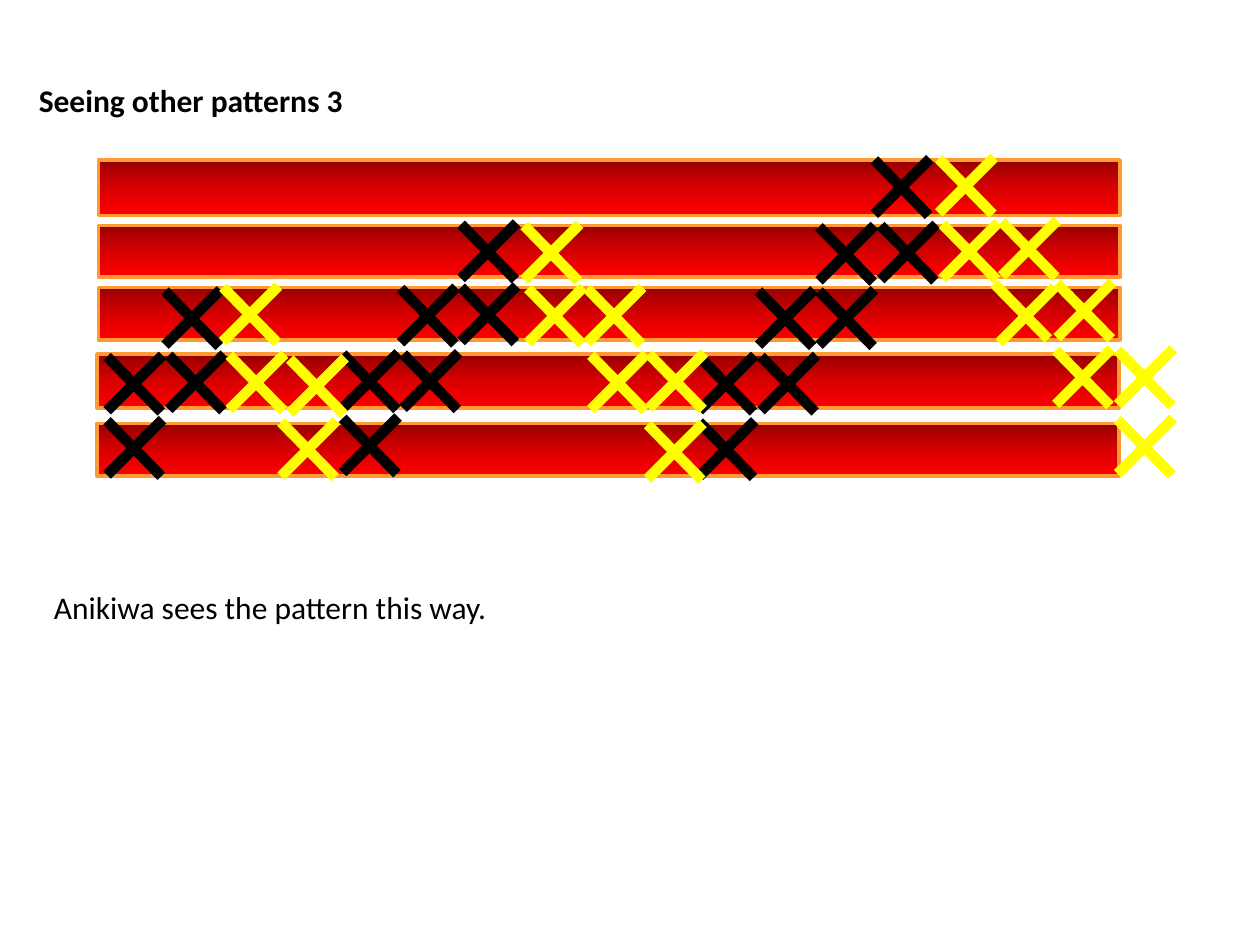
"""Build the slide of red bars marked with black and yellow crosses."""
import copy

import pptx
import pptx.dml.color
import pptx.enum.shapes
import pptx.oxml.ns
import pptx.util

PX = 9144
SHAPES = pptx.enum.shapes.MSO_SHAPE
LINE = pptx.enum.shapes.MSO_CONNECTOR.STRAIGHT
qn = pptx.oxml.ns.qn

bars = [(78, 127, 44), (78, 179, 41), (78, 228, 42), (77, 281, 43), (77, 336, 42)]
stops = [(0, "970000"), (0.5, "D70000"), (1, "FF0000")]
black = [
    (85, 334), (134, 282), (85, 283), (131, 231), (272, 332), (366, 178),
    (272, 281), (320, 281), (318, 229), (366, 228), (555, 335), (650, 180),
    (555, 283), (604, 283), (602, 231), (650, 231), (699, 179), (694, 127),
]
yellow = [
    (223, 335), (182, 282), (230, 285), (177, 228), (466, 229), (416, 179),
    (514, 337), (469, 282), (515, 281), (419, 229), (839, 225), (887, 333),
    (838, 278), (887, 278), (795, 176), (789, 225, 4), (748, 178), (745, 126),
]
texts = [
    ("Anikiwa sees the pattern this way.", (33, 462, 945, 40), False),
    ("Seeing other patterns 3", (21, 59, 486, 40), True),
]


def rgb(code):
    return pptx.dml.color.RGBColor.from_string(code)


def cross(shapes, tone, x, y, slip=0):
    strokes = [
        (x, y, x + 43, y + 44),
        (x + 44 + slip, y - 1 + slip, x + slip, y + 43 + slip),
    ]
    for ends in strokes:
        line = shapes.add_connector(LINE, *[n * PX for n in ends])
        line.line.color.rgb = rgb(tone)
        line.line.width = pptx.util.Pt(6)
        props = line._element.spPr
        props.append(props.makeelement(qn("a:effectLst"), {}))


deck = pptx.Presentation()
deck.slide_width = 1000 * PX
deck.slide_height = 750 * PX
slide = deck.slides.add_slide(deck.slide_layouts[6])
group = slide.shapes.add_group_shape()

for x, y, high in bars:
    bar = group.shapes.add_shape(SHAPES.RECTANGLE, x * PX, y * PX, 811 * PX, high * PX)
    bar.shadow.inherit = False
    bar.line.color.rgb = rgb("FF9933")
    bar.line.width = pptx.util.Pt(2)
    bar.fill.gradient()
    bar.fill.gradient_angle = 270
    ramp = bar._element.spPr.find(".//" + qn("a:gsLst"))
    ramp.insert(1, copy.deepcopy(ramp[0]))
    for stop, (place, tone) in zip(bar.fill.gradient_stops, stops):
        stop.position = place
        stop.color.rgb = rgb(tone)

for spot in black:
    cross(group.shapes, "000000", *spot)
for spot in yellow:
    cross(slide.shapes, "FFFF00", *spot)

for words, area, bold in texts:
    box = slide.shapes.add_textbox(*[n * PX for n in area])
    box.text_frame.word_wrap = True
    run = box.text_frame.paragraphs[0].add_run()
    run.text = words
    style = {"name": "Calibri", "size": pptx.util.Pt(18), "bold": bold}
    for key, value in style.items():
        setattr(run.font, key, value)
    run.font.color.rgb = rgb("000000")

deck.save("out.pptx")
